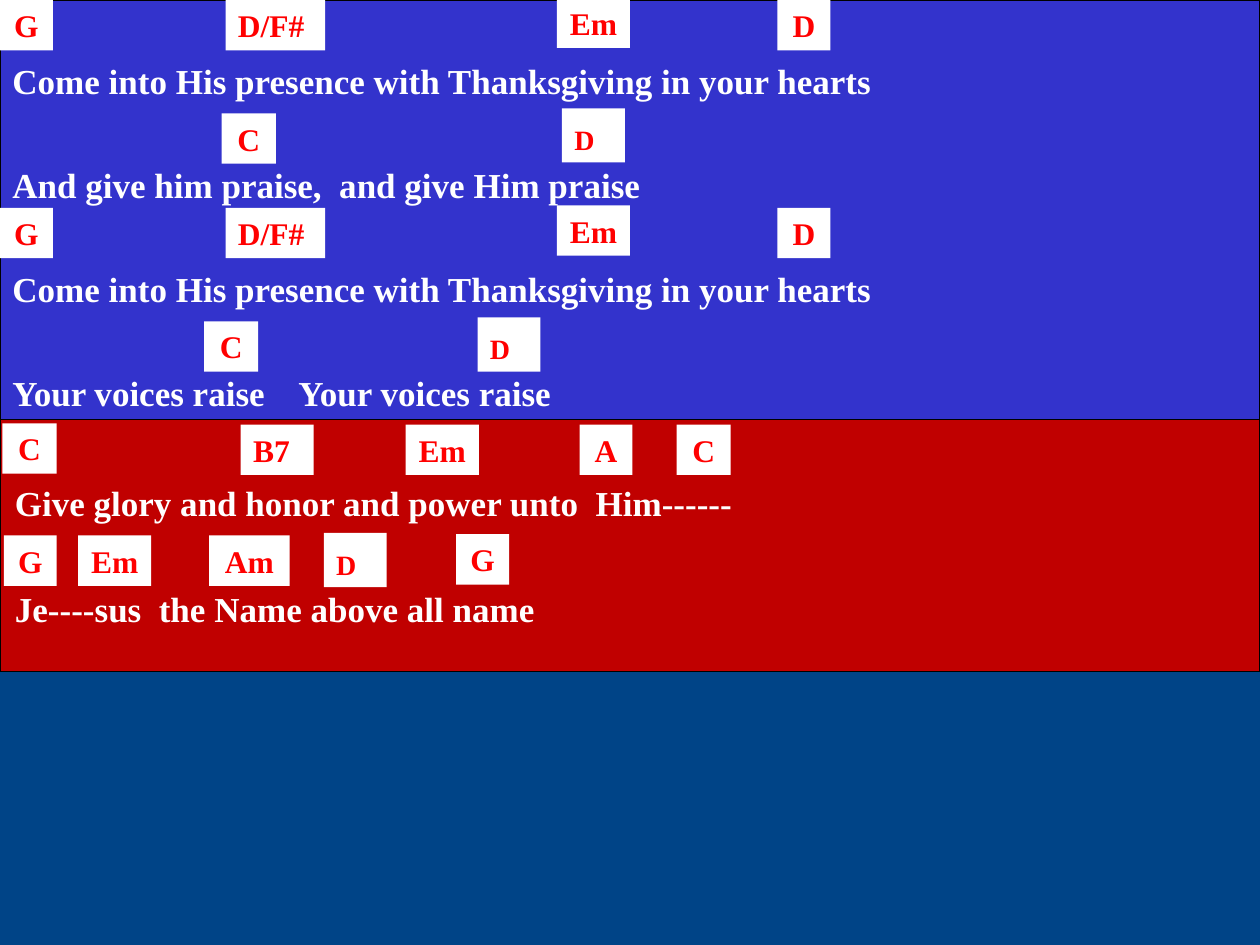
from dataclasses import dataclass

from lxml import etree
from pptx import Presentation
from pptx.dml.color import RGBColor
from pptx.enum.shapes import MSO_SHAPE
from pptx.enum.text import MSO_ANCHOR, PP_ALIGN
from pptx.oxml.ns import qn
from pptx.util import Inches, Pt

RECTANGLE = MSO_SHAPE.RECTANGLE
TOP, BOTTOM = MSO_ANCHOR.TOP, MSO_ANCHOR.BOTTOM
LEFT, CENTER = PP_ALIGN.LEFT, PP_ALIGN.CENTER

FONT = "Times New Roman"
BACKDROP, VERSE_BLUE, CHORUS_RED = "004487", "3333CC", "C00000"
WHITE, BLACK, CHORD_RED = "FFFFFF", "000000", "FF0000"
CHORD_WIDTHS = {"G": 0.42, "D": 0.42, "A": 0.42, "C": 0.43,
                "Em": 0.58, "B7": 0.58, "Am": 0.64, "D/F#": 0.79}
LEFT_ALIGNED_CHORDS = {"D/F#", "B7"}


@dataclass(frozen=True)
class Chord:
    name: str
    left: float
    rise: float
    small: bool = False


@dataclass(frozen=True)
class SongLine:
    lyric: str
    left: float
    top: float
    chords: tuple[Chord, ...]


OPENING_LYRIC = "Come into His presence with Thanksgiving in your hearts"
OPENING_CHORDS = (Chord("G", 0, 0.42), Chord("D/F#", 1.79, 0.42),
                  Chord("Em", 4.42, 0.44), Chord("D", 6.17, 0.42))

SONG = (
    SongLine(OPENING_LYRIC, 0, 0.42, OPENING_CHORDS),
    SongLine("And give him praise,  and give Him praise", 0, 1.25,
             (Chord("C", 1.76, 0.35), Chord("D", 4.46, 0.39, small=True))),
    SongLine(OPENING_LYRIC, 0, 2.07, OPENING_CHORDS),
    SongLine("Your voices raise    Your voices raise", 0, 2.9,
             (Chord("C", 1.62, 0.35), Chord("D", 3.79, 0.38, small=True))),
    SongLine("Give glory and honor and power unto  Him------", 0.02, 3.77,
             (Chord("C", 0.02, 0.41), Chord("B7", 1.91, 0.4),
              Chord("Em", 3.22, 0.4), Chord("A", 4.6, 0.4),
              Chord("C", 5.37, 0.4))),
    SongLine("Je----sus  the Name above all name", 0.02, 4.61,
             (Chord("G", 0.03, 0.36), Chord("Em", 0.62, 0.36),
              Chord("Am", 1.66, 0.36), Chord("D", 2.57, 0.38, small=True),
              Chord("G", 3.62, 0.37))),
)


def paint(fill, color: str) -> None:
    fill.solid()
    fill.fore_color.rgb = RGBColor.from_string(color)


def write(frame, text: str, size: float, color: str, align, anchor=TOP) -> None:
    frame.word_wrap = True
    frame.vertical_anchor = anchor
    paragraph = frame.paragraphs[0]
    paragraph.alignment = align
    spacing = etree.SubElement(paragraph._p.get_or_add_pPr(), qn("a:spcBef"))
    etree.SubElement(spacing, qn("a:spcPct")).set("val", "50000")
    run = paragraph.add_run()
    run.text = text
    run.font.name = FONT
    run.font.size = Pt(size)
    run.font.bold = True
    paint(run.font.fill, color)


def add_rectangle(slide, left: float, top: float, width: float, height: float,
                  color: str):
    rectangle = slide.shapes.add_shape(
        RECTANGLE, Inches(left), Inches(top), Inches(width), Inches(height))
    rectangle.shadow.inherit = False
    paint(rectangle.fill, color)
    return rectangle


def add_section(slide, top: float, height: float, color: str) -> None:
    section = add_rectangle(slide, 0, top, 10, height, color)
    paint(section.line.fill, BLACK)
    section.line.width = Pt(0.75)


def add_chord(slide, chord: Chord, lyric_top: float) -> None:
    width = 0.5 if chord.small else CHORD_WIDTHS[chord.name]
    height = 0.43 if chord.small else 0.4
    badge = add_rectangle(slide, chord.left, lyric_top - chord.rise,
                          width, height, WHITE)
    badge.line.fill.background()
    starts_left = chord.small or chord.name in LEFT_ALIGNED_CHORDS
    write(badge.text_frame, chord.name, 16 if chord.small else 18, CHORD_RED,
          LEFT if starts_left else CENTER, BOTTOM if chord.small else TOP)


def add_song_line(slide, line: SongLine) -> None:
    lyric = slide.shapes.add_textbox(
        Inches(line.left), Inches(line.top), Inches(10), Inches(0.44))
    write(lyric.text_frame, line.lyric, 20, WHITE, LEFT)
    for chord in line.chords:
        add_chord(slide, chord, line.top)


def main() -> None:
    deck = Presentation()
    deck.slide_width, deck.slide_height = Inches(10), Inches(7.5)
    slide = deck.slides.add_slide(deck.slide_layouts[6])
    paint(slide.background.fill, BACKDROP)
    add_section(slide, 3.31, 2.02, CHORUS_RED)
    add_section(slide, 0, 3.33, VERSE_BLUE)
    for line in SONG:
        add_song_line(slide, line)
    deck.save("out.pptx")


if __name__ == "__main__":
    main()
